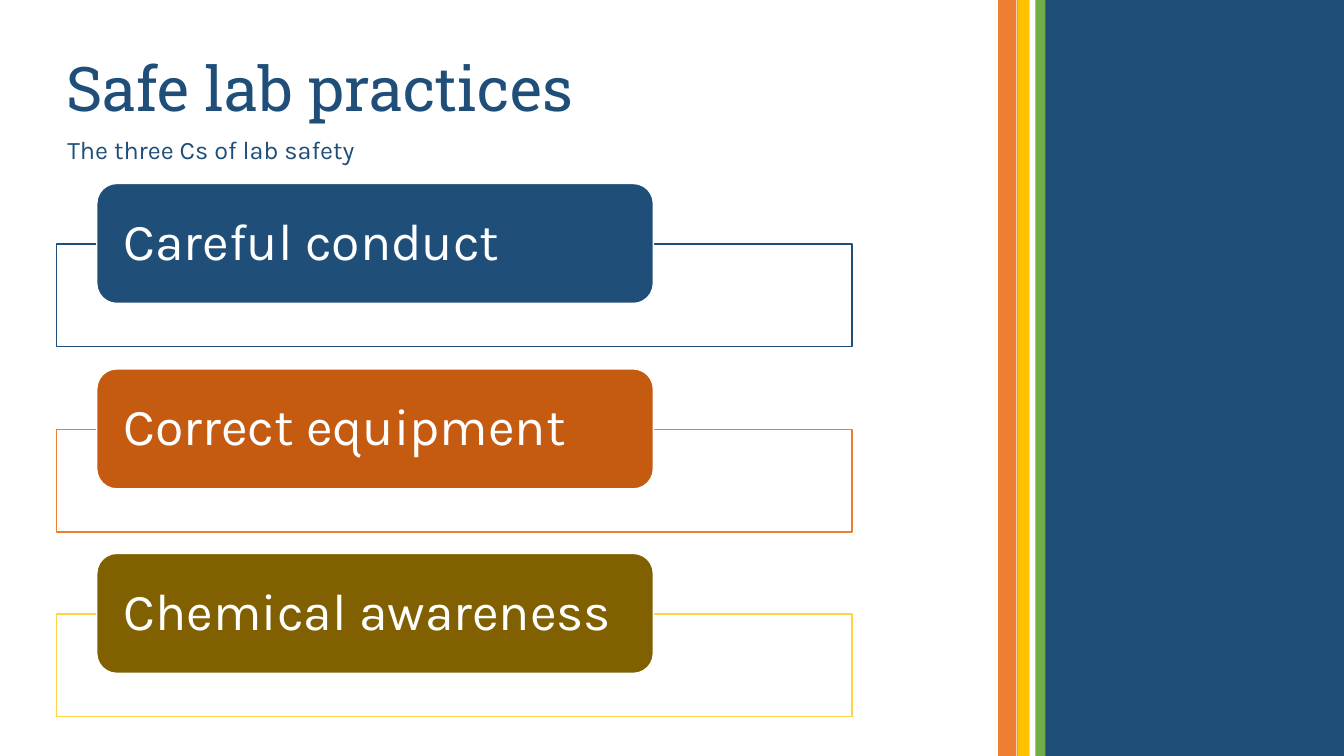
"""Build the slide on the three Cs of lab safety."""
from dataclasses import dataclass

from lxml.etree import SubElement
from pptx import Presentation
from pptx.dml.color import RGBColor
from pptx.enum.shapes import MSO_SHAPE
from pptx.enum.text import MSO_ANCHOR, PP_ALIGN
from pptx.oxml.ns import qn
from pptx.shapes.autoshape import Shape
from pptx.slide import Slide
from pptx.text.text import TextFrame
from pptx.util import Inches, Pt

NAVY, ORANGE, WHITE = "1F4E79", "ED7D31", "FFFFFF"
HEADING_FONT, BODY_FONT = "Roboto Slab", "Karla"
SLIDE_HEIGHT = 7.5
FIRST_PRACTICE_TOP, PRACTICE_STEP = 1.82, 1.835


@dataclass(frozen=True)
class Box:
    left: float
    top: float
    width: float
    height: float

    def lengths(self) -> list[Inches]:
        return [Inches(n) for n in (self.left, self.top, self.width, self.height)]


@dataclass(frozen=True)
class Stripe:
    left: float
    width: float
    color: str


@dataclass(frozen=True)
class Practice:
    label: str
    fill: str
    frame_color: str


STRIPES = [
    Stripe(10.09, 3.25, NAVY),
    Stripe(9.9, 0.18, ORANGE),
    Stripe(10.09, 0.13, "FFC000"),
    Stripe(10.21, 0.16, "70AD47"),
    Stripe(10.21, 0.06, WHITE),
]
PRACTICES = [
    Practice("Careful conduct", NAVY, NAVY),
    Practice("Correct equipment", "C55A11", ORANGE),
    Practice("Chemical awareness", "806000", "FFD347"),
]


def rgb(color: str) -> RGBColor:
    return RGBColor.from_string(color)


def add_block(slide: Slide, kind: MSO_SHAPE, box: Box, fill: str,
              outline: str | None = None) -> Shape:
    block = slide.shapes.add_shape(kind, *box.lengths())
    block.shadow.inherit = False
    block.fill.solid()
    block.fill.fore_color.rgb = rgb(fill)
    if outline:
        block.line.color.rgb = rgb(outline)
        block.line.width = Pt(1)
    else:
        block.line.fill.background()
    return block


def set_opacity(block: Shape, percent: int) -> None:
    color = block.fill._xPr.find(qn("a:solidFill")).find(qn("a:srgbClr"))
    SubElement(color, qn("a:alpha"), val=str(percent * 1000))


def write_text(frame: TextFrame, text: str, font: str, size: int, color: str,
               anchor: MSO_ANCHOR, insets: tuple[float, float, float]) -> None:
    side, top, bottom = (Inches(inset) for inset in insets)
    frame.word_wrap = True
    frame.vertical_anchor = anchor
    frame.margin_left = frame.margin_right = side
    frame.margin_top, frame.margin_bottom = top, bottom
    paragraph = frame.paragraphs[0]
    paragraph.alignment = PP_ALIGN.LEFT
    paragraph.line_spacing = 0.9
    run = paragraph.add_run()
    run.text = text
    run.font.name = font
    run.font.size = Pt(size)
    run.font.color.rgb = rgb(color)


def add_practice(slide: Slide, practice: Practice, top: float) -> None:
    frame = add_block(slide, MSO_SHAPE.RECTANGLE, Box(0.56, top + 0.6, 7.89, 1.02),
                      WHITE, practice.frame_color)
    set_opacity(frame, 90)
    pill = add_block(slide, MSO_SHAPE.ROUNDED_RECTANGLE, Box(0.96, top, 5.52, 1.19),
                     practice.fill, WHITE)
    write_text(pill.text_frame, practice.label, BODY_FONT, 37, WHITE,
               MSO_ANCHOR.MIDDLE, (0.21, 0, 0))


def main() -> None:
    deck = Presentation()
    deck.slide_width, deck.slide_height = Inches(13.33), Inches(SLIDE_HEIGHT)
    slide = deck.slides.add_slide(deck.slide_layouts[6])

    for stripe in STRIPES:
        add_block(slide, MSO_SHAPE.RECTANGLE,
                  Box(stripe.left, 0, stripe.width, SLIDE_HEIGHT), stripe.color)

    title = slide.shapes.add_textbox(*Box(0.56, 0.12, 8.95, 1.17).lengths())
    write_text(title.text_frame, "Safe lab practices", HEADING_FONT, 44, NAVY,
               MSO_ANCHOR.BOTTOM, (0.1, 0.05, 0.05))
    subtitle = slide.shapes.add_textbox(*Box(0.57, 1.32, 8.94, 0.42).lengths())
    write_text(subtitle.text_frame, "The three Cs of lab safety", BODY_FONT, 18, NAVY,
               MSO_ANCHOR.MIDDLE, (0.1, 0, 0.05))

    for index, practice in enumerate(PRACTICES):
        add_practice(slide, practice, round(FIRST_PRACTICE_TOP + index * PRACTICE_STEP, 2))

    deck.save("out.pptx")


if __name__ == "__main__":
    main()
